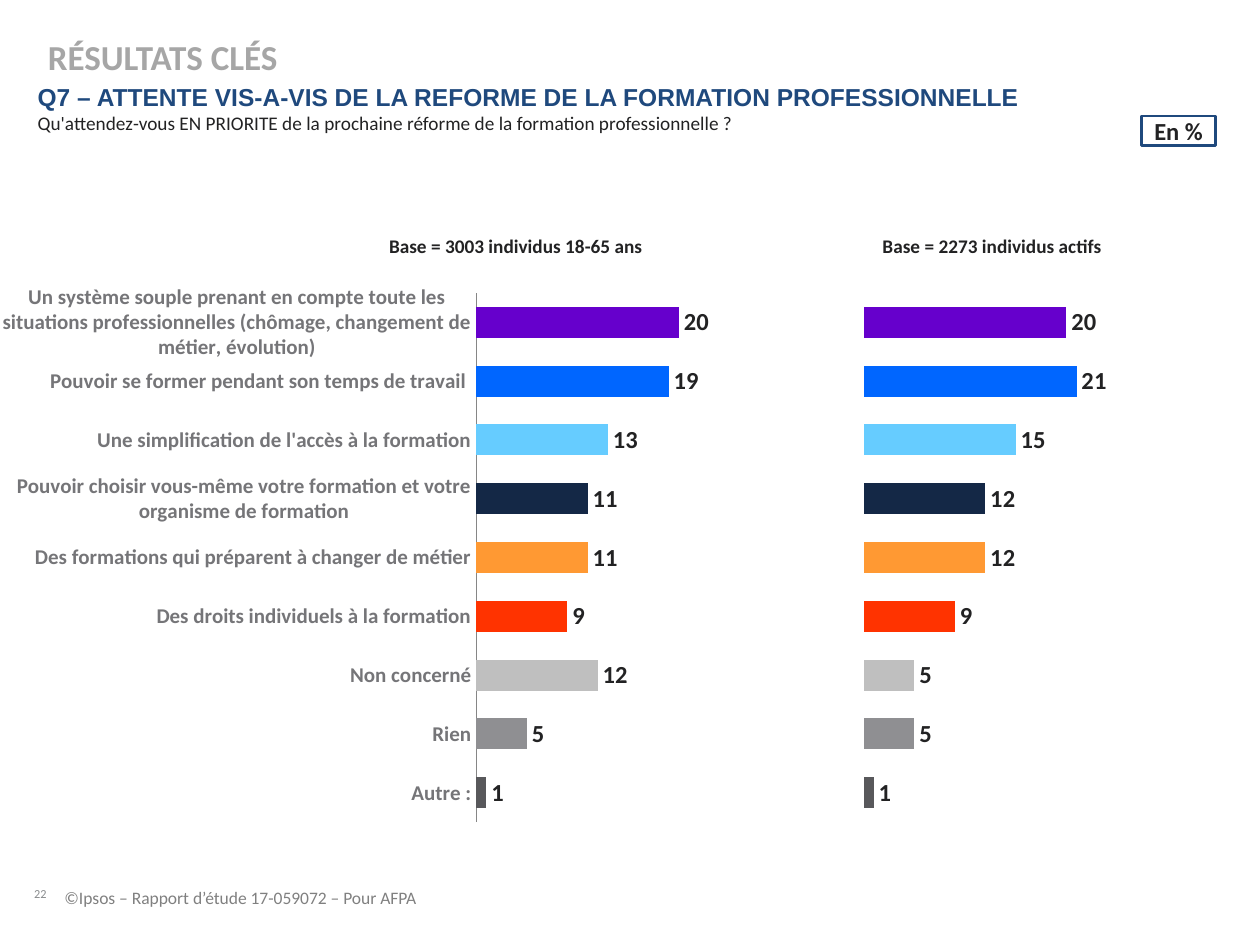
from dataclasses import dataclass

from lxml import etree
from pptx import Presentation
from pptx import util as u
from pptx.chart import data as cd
from pptx.dml.color import RGBColor
from pptx.enum import chart as ce, shapes, text
from pptx.oxml.ns import qn
from pptx.slide import Slide

NAVY = RGBColor(0x1F, 0x49, 0x7D)
INK = RGBColor(0x22, 0x22, 0x23)
PALE = RGBColor(0xA6, 0xA6, 0xA6)
LABEL = RGBColor(0x75, 0x75, 0x78)
AXIS = RGBColor(0x86, 0x86, 0x86)
FOOT = RGBColor(0x80, 0x80, 0x80)
PAGE = RGBColor(0x88, 0x8B, 0x8D)
BARS = [RGBColor.from_string(h) for h in (
    "6600CC", "0066FF", "66CCFF", "142846", "FF9933",
    "FF3300", "BFBFBF", "8F8F92", "58585B")]

NAMES = [
    "Un système souple prenant en compte toute les situations "
    "professionnelles (chômage, changement de métier, évolution)",
    "Pouvoir se former pendant son temps de travail ",
    "Une simplification de l'accès à la formation",
    "Pouvoir choisir vous-même votre formation et votre organisme de formation",
    "Des formations qui préparent à changer de métier",
    "Des droits individuels à la formation",
    "Non concerné",
    "Rien",
    "Autre :",
]
ALL = [20, 19, 13, 11, 11, 9, 12, 5, 1]
ACTIVE = [20, 21, 15, 12, 12, 9, 5, 5, 1]
PLOT = {"x": 0.4, "y": 0.04, "w": 0.6, "h": 0.92}
LEFT, MID = text.PP_ALIGN.LEFT, text.PP_ALIGN.CENTER


@dataclass
class Deck:
    slide: Slide
    face: str = "Calibri"

    def font(self, font, size, color=INK, bold=False, face=None):
        font.name = face or self.face
        font.size = u.Pt(size)
        font.bold = bold
        font.color.rgb = color

    def place(self, shape, left, top, width, height):
        shape.left, shape.top = u.Cm(left), u.Cm(top)
        shape.width, shape.height = u.Cm(width), u.Cm(height)

    def flush(self, frame):
        frame.margin_left = frame.margin_right = 0
        frame.margin_top = frame.margin_bottom = 0

    def title(self, words, *area):
        shape = self.slide.shapes.title
        self.place(shape, *area)
        frame = shape.text_frame
        frame.text = words
        frame.vertical_anchor = text.MSO_ANCHOR.MIDDLE
        frame.auto_size = text.MSO_AUTO_SIZE.NONE
        para = frame.paragraphs[0]
        para.alignment = LEFT
        self.font(para.runs[0].font, 20, PALE, True)

    def text(self, words, *area, size=11, color=INK, bold=False, align=LEFT):
        box = self.slide.shapes.add_textbox(*map(u.Cm, area))
        frame = box.text_frame
        frame.word_wrap = True
        self.flush(frame)
        frame.text = words
        para = frame.paragraphs[0]
        para.alignment = align
        self.font(para.runs[0].font, size, color, bold)
        return frame

    def topic(self, head, query, *area):
        """Add the question heading with its wording below."""
        box = self.slide.shapes.add_textbox(*map(u.Cm, area))
        frame = box.text_frame
        frame.word_wrap = True
        frame.text = head
        self.font(frame.paragraphs[0].runs[0].font, 14, NAVY, True, "Arial")
        para = frame.add_paragraph()
        para.text = query
        self.font(para.runs[0].font, 11)

    def badge(self, words, *area):
        shape = self.slide.shapes.add_shape(
            shapes.MSO_SHAPE.RECTANGLE, *map(u.Cm, area))
        shape.shadow.inherit = False
        shape.fill.background()
        shape.line.color.rgb = NAVY
        shape.line.width = u.Pt(1.5)
        frame = shape.text_frame
        self.flush(frame)
        frame.text = words
        para = frame.paragraphs[0]
        para.alignment = MID
        self.font(para.runs[0].font, 14, INK, True)

    def chart(self, names, values, *area, named=True):
        data = cd.CategoryChartData(number_format="0")
        data.categories = names
        data.add_series("Series 1", values)
        chart = self.slide.shapes.add_chart(
            ce.XL_CHART_TYPE.BAR_CLUSTERED, *map(u.Cm, area), data).chart
        chart.has_legend = chart.has_title = False
        self.font(chart.font, 18)
        self.axes(chart, named)
        self.bars(chart.plots[0])
        self.layout(chart)

    def axes(self, chart, named):
        cat, val = chart.category_axis, chart.value_axis
        val.minimum_scale, val.maximum_scale = 0, 70
        val.has_major_gridlines = False
        val.visible = False
        cat.reverse_order = True
        cat.visible = named
        cat.major_tick_mark = ce.XL_TICK_MARK.NONE
        if named:
            cat.format.line.color.rgb = AXIS
            self.font(cat.tick_labels.font, 12, LABEL, True)

    def bars(self, plot):
        plot.gap_width = 90
        plot.vary_by_categories = False
        row = plot.series[0]
        row.format.fill.solid()
        row.format.fill.fore_color.rgb = PALE
        for i, color in enumerate(BARS):
            fill = row.points[i].format.fill
            fill.solid()
            fill.fore_color.rgb = color
        tags = row.data_labels
        tags.show_value = True
        tags.position = ce.XL_LABEL_POSITION.OUTSIDE_END
        self.font(tags.font, 14, INK, True)

    def layout(self, chart):
        """Fix the inner plot area as shares of the chart frame."""
        area = chart._chartSpace.chart.plotArea
        for old in area.findall(qn("c:layout")):
            area.remove(old)
        outer = etree.Element(qn("c:layout"))
        area.insert(0, outer)
        inner = etree.SubElement(outer, qn("c:manualLayout"))
        rules = [("layoutTarget", "inner"), ("xMode", "edge"),
                 ("yMode", "edge"), *PLOT.items()]
        for tag, value in rules:
            etree.SubElement(inner, qn("c:" + tag)).set("val", str(value))


def main():
    prs = Presentation()
    prs.slide_width, prs.slide_height = u.Cm(25.4), u.Cm(19.05)
    deck = Deck(prs.slides.add_slide(prs.slide_layouts[5]))

    deck.title("RÉSULTATS CLÉS", 0.71, 0.53, 19.1, 1.22)
    deck.topic(
        "Q7 – ATTENTE VIS-A-VIS DE LA REFORME DE LA FORMATION PROFESSIONNELLE",
        "Qu'attendez-vous EN PRIORITE de la prochaine réforme de la "
        "formation professionnelle ?", 0.51, 1.52, 26.6, 1.32)
    deck.badge("En %", 23.01, 2.34, 1.5, 0.6)

    deck.chart(NAMES, ALL, 0.05, 5.44, 23.85, 11.6)
    ranks = [str(i + 1) for i in range(len(ACTIVE))]
    deck.chart(ranks, ACTIVE, 7.87, 5.44, 23.85, 11.6, named=False)
    bases = [("Base = 3003 individus 18-65 ans", 7.5),
             ("Base = 2273 individus actifs", 17.1)]
    for words, left in bases:
        deck.text(words, left, 4.72, 5.8, 0.5, bold=True, align=MID)

    page = deck.text("22", 0.69, 17.25, 0.6, 0.91, size=7, color=PAGE)
    page.vertical_anchor = text.MSO_ANCHOR.BOTTOM
    deck.text("©Ipsos – Rapport d’étude 17-059072 – Pour AFPA",
              1.3, 17.88, 13.05, 1.17, size=10, color=FOOT)
    prs.save("out.pptx")


if __name__ == "__main__":
    main()
